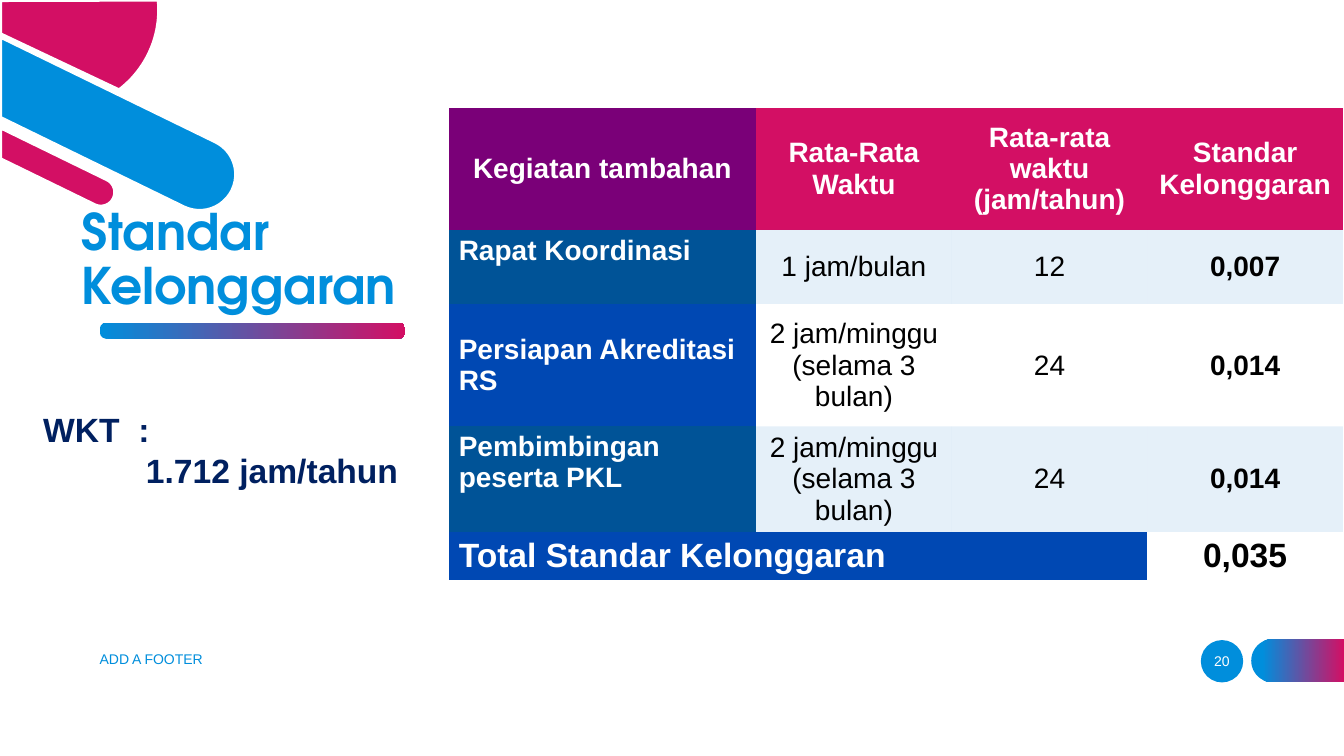
import math
from dataclasses import dataclass
from typing import NamedTuple

from lxml import etree
from pptx import Presentation
from pptx import util as u
from pptx.dml.color import RGBColor
from pptx.enum import shapes, text
from pptx.oxml import ns

LEFT, CENTER = text.PP_ALIGN.LEFT, text.PP_ALIGN.CENTER
TOP, MIDDLE, BOTTOM = (text.MSO_ANCHOR.TOP, text.MSO_ANCHOR.MIDDLE,
                       text.MSO_ANCHOR.BOTTOM)
NO_GRID_STYLE = "{2D5ABB26-0587-4C30-8999-92F81FD0307C}"
SLIDE_WIDTH, SLIDE_HEIGHT = 13.33, 7.5
BAND_TILT = 26
Point = tuple[float, float]


@dataclass(frozen=True)
class Theme:
    blue: str = "008EDC"
    crimson: str = "D30F64"
    purple: str = "7A0078"
    teal: str = "005397"
    royal: str = "0048B3"
    tint: str = "006FC9"
    navy: str = "002060"
    white: str = "FFFFFF"
    black: str = "000000"
    body_font: str = "Arial"
    title_font: str = "TeX Gyre Adventor"
    title_size: int = 36
    large: int = 24
    table_size: int = 20
    small: int = 10
    edge: int = 3


T = Theme()


class Band(NamedTuple):
    """A tilted band from the left slide edge to a round end."""
    color: str
    top: float
    bottom: float
    end_x: float


class Label(NamedTuple):
    box: tuple[float, float, float, float]
    lines: list[tuple[str, text.PP_ALIGN]]
    size: int
    color: str
    bold: bool = False
    anchor: text.MSO_ANCHOR = MIDDLE


class Activity(NamedTuple):
    name: str
    average: str
    hours: str
    allowance: str
    name_anchor: text.MSO_ANCHOR


BANDS = [Band(T.blue, 0.36, 1.17, 1.98), Band(T.crimson, 1.26, 1.58, 1.0)]
LABELS = [
    Label((0.89, 6.34, 4.5, 0.4), [("ADD A FOOTER", LEFT)], T.small, T.blue),
    Label((11.82, 6.36, 0.6, 0.4), [("20", CENTER)], T.small, T.white),
    Label((0.33, 4.01, 4.83, 0.91), [("WKT  :", LEFT), ("1.712 jam/tahun ", CENTER)],
          T.large, T.navy, True, TOP),
]
HEADINGS = ["Kegiatan tambahan", "Rata-Rata Waktu", "Rata-rata waktu (jam/tahun)",
            "Standar Kelonggaran"]
ACTIVITIES = [
    Activity("Rapat Koordinasi", "1 jam/bulan", "12", "0,007", TOP),
    Activity("Persiapan Akreditasi RS", "2 jam/minggu (selama 3 bulan)", "24", "0,014",
             MIDDLE),
    Activity("Pembimbingan peserta PKL", "2 jam/minggu (selama 3 bulan)", "24", "0,014",
             TOP),
]
COLUMN_WIDTHS = [3.05, 1.94, 1.94, 1.94]
ROW_HEIGHTS = [1.21, 0.74, 1.21, 1.05, 0.47]


def write(p, content: str, *, size: int, color: str, bold: bool = False,
          font: str = T.body_font, align: text.PP_ALIGN = LEFT) -> None:
    p.alignment = align
    r = p.add_run()
    r.text = content
    r.font.name, r.font.size, r.font.bold = font, u.Pt(size), bold
    r.font.color.rgb = RGBColor.from_string(color)


def paint(fill, color: str) -> None:
    fill.solid()
    fill.fore_color.rgb = RGBColor.from_string(color)


def blend(fill, start: float) -> None:
    """Fade from blue to crimson, left to right."""
    fill.gradient()
    fill.gradient_angle = 0
    for stop, position, color in zip(fill.gradient_stops, (start, 1),
                                     (T.blue, T.crimson)):
        stop.position = position
        stop.color.rgb = RGBColor.from_string(color)


def arc(x: float, y: float, radius: float, start: float, end: float) -> list[Point]:
    """Points on a circle, with angles in degrees clockwise from the right."""
    count = 24
    angles = [math.radians(start + (end - start) * i / count) for i in range(count + 1)]
    return [(x + radius * math.cos(a), y + radius * math.sin(a)) for a in angles]


def draw_outline(slide, points: list[Point]):
    first, *rest = [(u.Inches(x), u.Inches(y)) for x, y in points]
    builder = slide.shapes.build_freeform(*first)
    builder.add_line_segments(rest, close=True)
    return builder.convert_to_shape()


def add_preset(slide, kind: shapes.MSO_SHAPE, *box: float):
    return slide.shapes.add_shape(kind, *map(u.Inches, box))


def flatten_style(sp) -> None:
    sp.shadow.inherit = False
    sp.line.fill.background()


def edge_white(sp, color: str) -> None:
    flatten_style(sp)
    paint(sp.fill, color)
    paint(sp.line.fill, T.white)
    sp.line.width = u.Pt(T.edge)


def draw_corner(slide) -> None:
    disk = [(0, 0), *arc(0.58, 0.1, 1, -6, 53), (0, 0.34)]
    edge_white(draw_outline(slide, disk), T.crimson)
    tilt = math.radians(BAND_TILT)
    for band in BANDS:
        radius = (band.bottom - band.top) / 2 * math.cos(tilt)
        end_y = (band.top + band.bottom) / 2 + band.end_x * math.tan(tilt)
        tip = arc(band.end_x, end_y, radius, BAND_TILT - 90, BAND_TILT + 90)
        edge_white(draw_outline(slide, [(0, band.top), *tip, (0, band.bottom)]),
                   band.color)


def draw_accents(slide) -> None:
    """Draw the number badge, the side tab and the bar under the title."""
    badge = add_preset(slide, shapes.MSO_SHAPE.OVAL, 11.91, 6.35, 0.42, 0.42)
    paint(badge.fill, T.blue)
    top, bottom = 6.34, 6.77
    radius = (bottom - top) / 2
    tab = draw_outline(slide, [(SLIDE_WIDTH, bottom),
                               *arc(12.41 + radius, top + radius, radius, 90, 270),
                               (SLIDE_WIDTH, top)])
    blend(tab.fill, 0.12)
    bar = add_preset(slide, shapes.MSO_SHAPE.ROUNDED_RECTANGLE, 0.99, 3.2, 3.03, 0.16)
    bar.adjustments[0] = 0.4
    blend(bar.fill, 0)
    for sp in (badge, tab, bar):
        flatten_style(sp)


def draw_label(slide, label: Label) -> None:
    tf = slide.shapes.add_textbox(*map(u.Inches, label.box)).text_frame
    tf.word_wrap, tf.vertical_anchor = True, label.anchor
    for i, (line, align) in enumerate(label.lines):
        p = tf.add_paragraph() if i else tf.paragraphs[0]
        write(p, line, size=label.size, color=label.color, bold=label.bold, align=align)


def fill_cell(cell, content: str, fill: str, *, color: str = T.white, bold: bool = True,
              size: int = T.table_size, align: text.PP_ALIGN = CENTER,
              anchor: text.MSO_ANCHOR = MIDDLE) -> None:
    cell.vertical_anchor = anchor
    paint(cell.fill, fill)
    if fill == T.tint:
        rgb = cell._tc.tcPr.find(".//" + ns.qn("a:srgbClr"))
        etree.SubElement(rgb, ns.qn("a:alpha")).set("val", "10000")
    write(cell.text_frame.paragraphs[0], content, size=size, color=color, bold=bold,
          align=align)


def draw_table(slide) -> None:
    frame = slide.shapes.add_table(
        len(ROW_HEIGHTS), len(COLUMN_WIDTHS), u.Inches(4.45), u.Inches(1.07),
        u.Inches(sum(COLUMN_WIDTHS)), u.Inches(sum(ROW_HEIGHTS)))
    table = frame.table
    table.first_row = table.horz_banding = False
    table._tbl.tblPr.find(ns.qn("a:tableStyleId")).text = NO_GRID_STYLE
    for column, width in zip(table.columns, COLUMN_WIDTHS):
        column.width = u.Inches(width)
    for row, height in zip(table.rows, ROW_HEIGHTS):
        row.height = u.Inches(height)
    for c, heading in enumerate(HEADINGS):
        fill_cell(table.cell(0, c), heading, T.crimson if c else T.purple)
    for r, activity in enumerate(ACTIVITIES, 1):
        name_fill, value_fill = (T.teal, T.tint) if r % 2 else (T.royal, T.white)
        fill_cell(table.cell(r, 0), activity.name, name_fill, align=LEFT,
                  anchor=activity.name_anchor)
        for c, value in enumerate(activity[1:4], 1):
            fill_cell(table.cell(r, c), value, value_fill, color=T.black, bold=c == 3)
    table.cell(4, 0).merge(table.cell(4, 2))
    fill_cell(table.cell(4, 0), "Total Standar Kelonggaran", T.royal, size=T.large,
              align=LEFT)
    fill_cell(table.cell(4, 3), "0,035", T.white, color=T.black, size=T.large)


def place_title(slide) -> None:
    title = slide.shapes.title
    title.left, title.top, title.width, title.height = map(
        u.Inches, (0.71, 2.44, 3.9, 0.74))
    tf = title.text_frame
    tf.word_wrap, tf.vertical_anchor = True, BOTTOM
    tf.auto_size = text.MSO_AUTO_SIZE.NONE
    p = tf.paragraphs[0]
    p.line_spacing = 0.9
    write(p, "Standar Kelonggaran", size=T.title_size, color=T.blue, bold=True,
          font=T.title_font)
    slide.shapes._spTree.append(title._element)


def main() -> None:
    prs = Presentation()
    prs.slide_width, prs.slide_height = u.Inches(SLIDE_WIDTH), u.Inches(SLIDE_HEIGHT)
    slide = prs.slides.add_slide(prs.slide_layouts[5])
    draw_corner(slide)
    draw_accents(slide)
    place_title(slide)
    draw_table(slide)
    for label in LABELS:
        draw_label(slide, label)
    prs.save("out.pptx")


if __name__ == "__main__":
    main()
